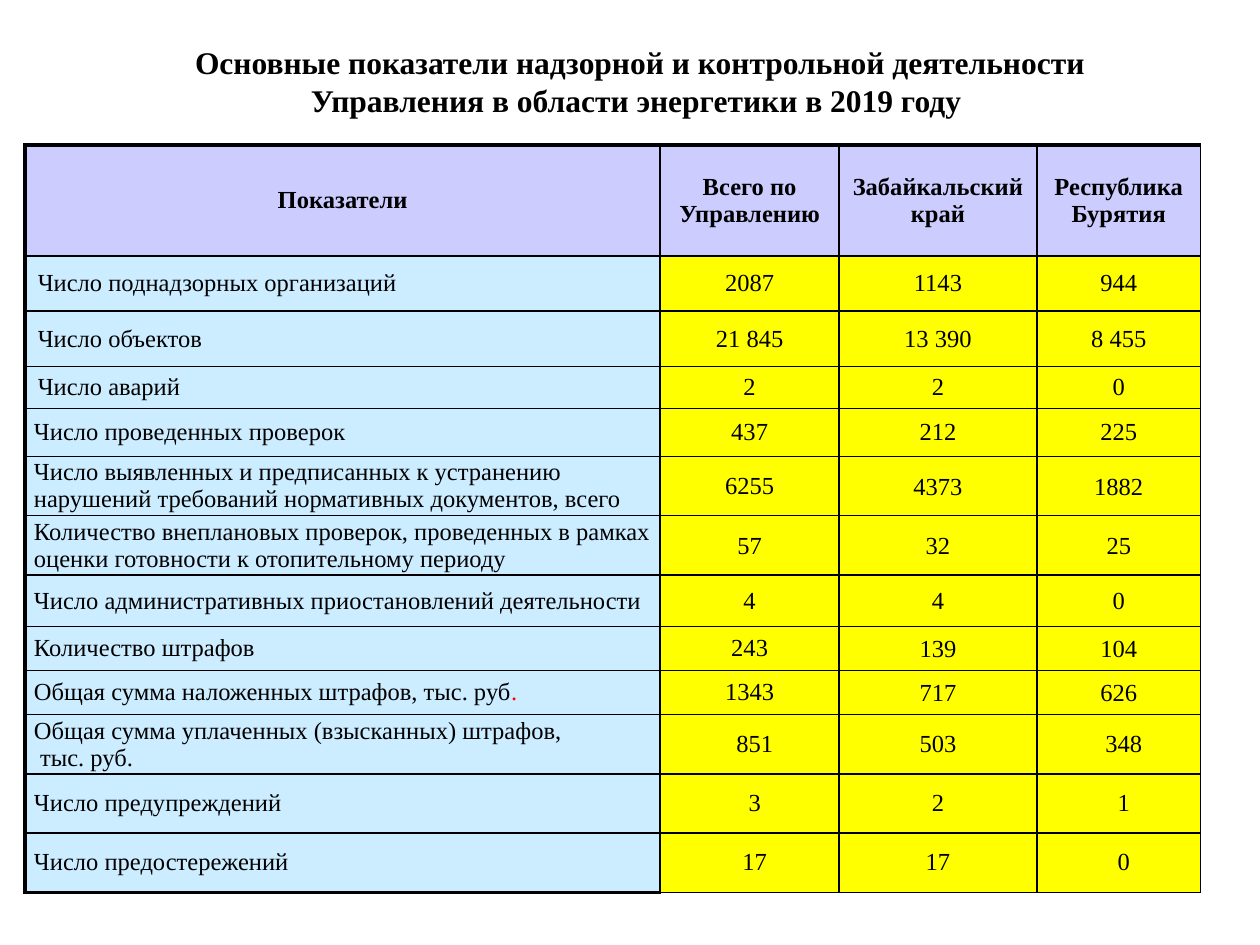
from lxml import etree
from pptx import Presentation
from pptx.dml.color import RGBColor
from pptx.enum.text import MSO_ANCHOR, PP_ALIGN
from pptx.oxml.ns import qn
from pptx.util import Inches, Pt

LEFT, CENTER, RIGHT = PP_ALIGN.LEFT, PP_ALIGN.CENTER, PP_ALIGN.RIGHT
MIDDLE = MSO_ANCHOR.MIDDLE

FONT = "Times New Roman"
BLACK = RGBColor(0x00, 0x00, 0x00)
RED = RGBColor(0xFF, 0x00, 0x00)
LAVENDER = RGBColor(0xCC, 0xCC, 0xFF)
PALE_BLUE = RGBColor(0xCC, 0xEC, 0xFF)
YELLOW = RGBColor(0xFF, 0xFF, 0x00)

TITLE = ("Основные показатели надзорной и контрольной деятельности "
         "Управления в области энергетики в 2019 году ")
PAGE_NUMBER = "4"
HEADINGS = ["Показатели", "Всего по Управлению", "Забайкальский край", "Республика Бурятия"]

INSETS = {
    "W": (0.1, 0.05, 0.1, 0.05),
    "T": (0.01, 0.01, 0.01, 0),
    "N": (0.07, 0, 0.07, 0),
    "I": (0.15, 0, 0.07, 0),
}
INDICATORS = [
    (0.44, "WWWW", ["Число поднадзорных организаций"], "2087", "1143", "944"),
    (0.44, "WWTT", ["Число объектов"], "21 845", "13 390", "8 455"),
    (0.33, "WWWW", ["Число аварий"], "2", "2", "0"),
    (0.38, "NWWW", ["Число проведенных проверок"], "437", "212", "225"),
    (0.47, "NWTT", ["Число выявленных и предписанных к устранению нарушений "
                    "требований нормативных документов, всего"], "6255", "4373", "1882"),
    (0.47, "NTTT", ["Количество внеплановых проверок, проведенных в рамках "
                    "оценки готовности к отопительному периоду"], "57", "32", "25"),
    (0.41, "NWTT", ["Число административных приостановлений деятельности"], "4", "4", "0"),
    (0.35, "NWTT", ["Количество штрафов"], "243", "139", "104"),
    (0.35, "NWTT", [[("Общая сумма наложенных штрафов, тыс. руб", BLACK), (".", RED)]],
     "1343", "717", "626"),
    (0.47, "NIWI", ["Общая сумма уплаченных (взысканных) штрафов,", " тыс. руб."],
     "851", "503", "348"),
    (0.47, "NIWI", ["Число предупреждений"], "3", "2", "1"),
    (0.47, "NIWI", ["Число предостережений"], "17", "17", "0"),
]
COLUMN_WIDTHS = [5.04, 1.42, 1.57, 1.3]
HEADER_HEIGHT = 0.88
THIN, THICK = 1, 2.25


def write(frame, lines, size, align, bold=False):
    frame.word_wrap = True
    for index, line in enumerate(lines):
        paragraph = frame.add_paragraph() if index else frame.paragraphs[0]
        paragraph.alignment = align
        for text, color in [(line, BLACK)] if isinstance(line, str) else line:
            run = paragraph.add_run()
            run.text = text
            run.font.name = FONT
            run.font.size = Pt(size)
            run.font.bold = bold
            run.font.color.rgb = color


def draw_borders(cell, widths):
    properties = cell._tc.get_or_add_tcPr()
    for side, width in zip("LRTB", widths):
        line = etree.SubElement(properties, qn(f"a:ln{side}"), w=str(int(Pt(width))))
        fill = etree.SubElement(line, qn("a:solidFill"))
        etree.SubElement(fill, qn("a:srgbClr"), val=str(BLACK))


def format_cell(cell, lines, inset, fill, borders, align=CENTER, bold=False):
    draw_borders(cell, borders)
    cell.fill.solid()
    cell.fill.fore_color.rgb = fill
    cell.vertical_anchor = MIDDLE
    left, top, right, bottom = map(Inches, INSETS[inset])
    cell.margin_left, cell.margin_top = left, top
    cell.margin_right, cell.margin_bottom = right, bottom
    write(cell.text_frame, lines, 14, align, bold)


def main():
    deck = Presentation()
    deck.slide_width, deck.slide_height = Inches(10), Inches(7.5)
    slide = deck.slides.add_slide(deck.slide_layouts[5])

    page_number = slide.shapes.add_textbox(Inches(7.17), Inches(6.83), Inches(2.08), Inches(0.5))
    write(page_number.text_frame, [PAGE_NUMBER], 14, RIGHT)

    title = slide.shapes.title
    title.left, title.top = Inches(0.83), Inches(0.18)
    title.width, title.height = Inches(8.5), Inches(0.92)
    title.text_frame.vertical_anchor = MIDDLE
    write(title.text_frame, [TITLE], 18, CENTER, bold=True)

    heights = [HEADER_HEIGHT] + [indicator[0] for indicator in INDICATORS]
    table = slide.shapes.add_table(
        len(heights), len(COLUMN_WIDTHS), Inches(0.2), Inches(1.15),
        Inches(sum(COLUMN_WIDTHS)), Inches(sum(heights))).table
    table.first_row = table.horz_banding = False
    for column, width in zip(table.columns, COLUMN_WIDTHS):
        column.width = Inches(width)
    for row, height in zip(table.rows, heights):
        row.height = Inches(height)

    for column, heading in enumerate(HEADINGS):
        outer = THIN if column else THICK
        format_cell(table.cell(0, column), [heading], "W", LAVENDER,
                    (outer, THIN, THICK, THIN), bold=True)

    for row, (_, insets, label, *values) in enumerate(INDICATORS, start=1):
        bottom = THICK if row == len(INDICATORS) else THIN
        format_cell(table.cell(row, 0), label, insets[0], PALE_BLUE,
                    (THICK, THIN, THIN, bottom), LEFT)
        for column, value in enumerate(values, start=1):
            format_cell(table.cell(row, column), [value], insets[column], YELLOW, (THIN,) * 4)

    deck.save("out.pptx")


if __name__ == "__main__":
    main()
